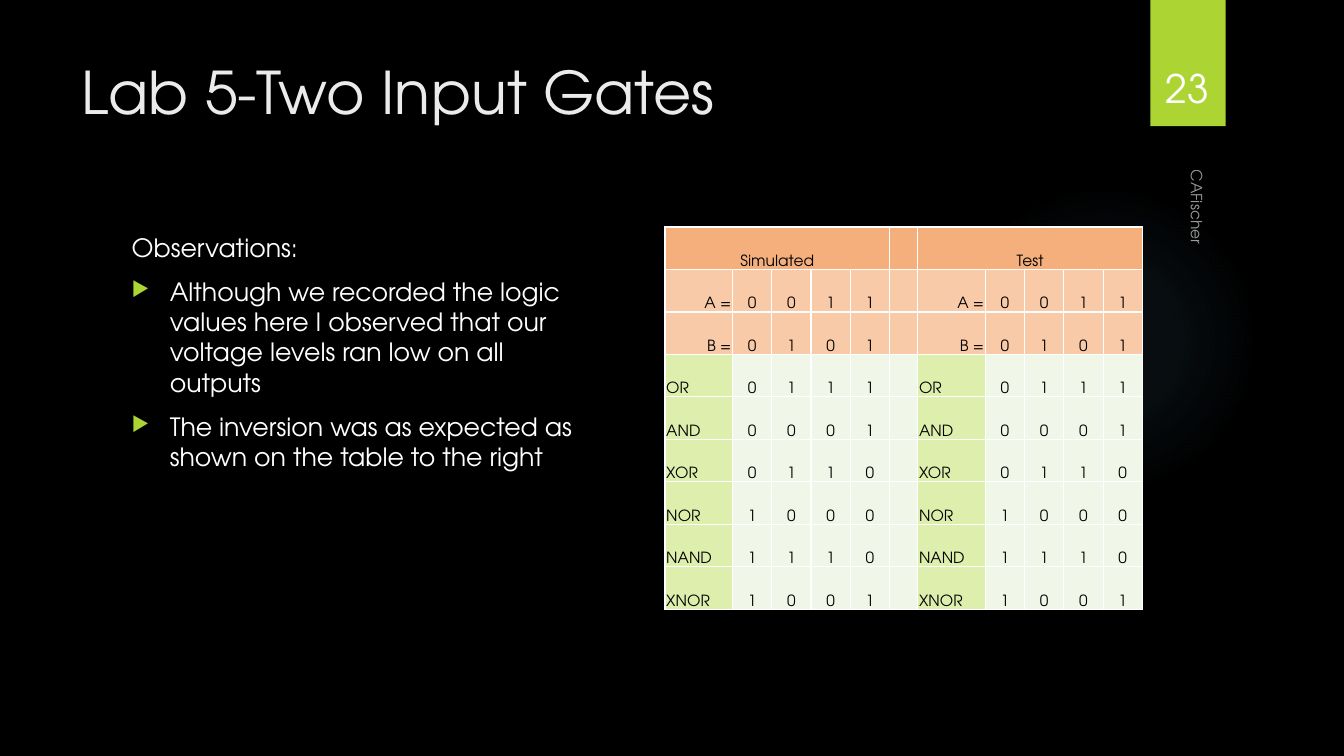
from lxml import etree
from pptx import Presentation
from pptx.dml.color import RGBColor
from pptx.enum.shapes import MSO_SHAPE
from pptx.enum.text import MSO_ANCHOR, PP_ALIGN
from pptx.oxml import parse_xml
from pptx.oxml.ns import nsdecls, qn
from pptx.util import Cm, Pt

FONT = "TeX Gyre Adventor"
BLACK = RGBColor(0x00, 0x00, 0x00)
WHITE = RGBColor(0xFF, 0xFF, 0xFF)
TITLE_GRAY = RGBColor(0xEB, 0xEB, 0xEB)
LIME = RGBColor(0xAC, 0xD4, 0x33)
GLOW_BLUE = RGBColor(0x7A, 0xC4, 0xF0)
ORANGE = RGBColor(0xF5, 0xAF, 0x7C)
LIGHT_ORANGE = RGBColor(0xF9, 0xCA, 0xA7)
GREEN = RGBColor(0xDE, 0xEE, 0xAD)
LIGHT_GREEN = RGBColor(0xF1, 0xF7, 0xE8)
LEFT, CENTER, RIGHT = PP_ALIGN.LEFT, PP_ALIGN.CENTER, PP_ALIGN.RIGHT
TOP, BOTTOM = MSO_ANCHOR.TOP, MSO_ANCHOR.BOTTOM


def format_paragraph(paragraph, size, color, alignment=LEFT):
    paragraph.alignment = alignment
    for run in paragraph.runs:
        run.font.name = FONT
        run.font.size = Pt(size)
        run.font.color.rgb = color


def add_text(slide, left, top, width, height, text, anchor):
    shape = slide.shapes.add_textbox(Cm(left), Cm(top), Cm(width), Cm(height))
    shape.text_frame.word_wrap = True
    shape.text_frame.vertical_anchor = anchor
    shape.text_frame.text = text
    return shape


presentation = Presentation()
presentation.slide_width = Cm(33.87)
presentation.slide_height = Cm(19.05)
slide = presentation.slides.add_slide(presentation.slide_layouts[5])
slide.background.fill.solid()
slide.background.fill.fore_color.rgb = BLACK

# Background glow and page tab
glow = slide.shapes.add_shape(MSO_SHAPE.OVAL, Cm(23.9), Cm(4.65), Cm(7.82), Cm(7.82))
glow.shadow.inherit = False
glow.line.fill.background()
stops = "".join(
    f'<a:gs pos="{position}000"><a:srgbClr val="{GLOW_BLUE}">'
    f'<a:alpha val="{alpha}000"/></a:srgbClr></a:gs>'
    for position, alpha in [(0, 7), (36, 6), (69, 0)]
)
gradient = parse_xml(
    f'<a:gradFill {nsdecls("a")}><a:gsLst>{stops}</a:gsLst><a:path path="circle">'
    '<a:fillToRect l="50000" t="50000" r="50000" b="50000"/></a:path></a:gradFill>'
)
glow.element.spPr.find(qn("a:prstGeom")).addnext(gradient)

page_tab = slide.shapes.add_shape(MSO_SHAPE.RECTANGLE, Cm(28.99), Cm(0), Cm(1.9), Cm(3.18))
page_tab.shadow.inherit = False
page_tab.fill.solid()
page_tab.fill.fore_color.rgb = LIME
page_tab.line.fill.background()

# Title
title = slide.shapes.title
title.left, title.top, title.width, title.height = Cm(1.8), Cm(1.27), Cm(26.14), Cm(3.89)
title.text_frame.text = "Lab 5-Two Input Gates"
title.text_frame.vertical_anchor = TOP
format_paragraph(title.text_frame.paragraphs[0], 42, TITLE_GRAY)

# Observations
observations = [
    "Observations:",
    "Although we recorded the logic values here I observed that our voltage levels ran low on all outputs",
    "The inversion was as expected as shown on the table to the right",
]
body = add_text(slide, 3.07, 5.72, 12.22, 11.66, "\n".join(observations), TOP)
for index, paragraph in enumerate(body.text_frame.paragraphs):
    format_paragraph(paragraph, 18, WHITE)
    if index > 0:
        paragraph.space_before = Pt(10)
        properties = paragraph._p.get_or_add_pPr()
        properties.set("marL", str(Cm(0.96)))
        properties.set("indent", str(-Cm(0.96)))
        bullet_color = etree.SubElement(properties, qn("a:buClr"))
        etree.SubElement(bullet_color, qn("a:srgbClr"), val=str(LIME))
        etree.SubElement(properties, qn("a:buSzPct"), val="80000")
        etree.SubElement(properties, qn("a:buChar"), char="▶")

# Footer and page number
footer = add_text(slide, 24.87, 8.97, 10.72, 0.84, "CAFischer", BOTTOM)
footer.rotation = 90
format_paragraph(footer.text_frame.paragraphs[0], 11, WHITE)
footer_color = next(footer.element.iter(qn("a:srgbClr")))
etree.SubElement(footer_color, qn("a:alpha"), val="60000")

page_number = add_text(slide, 28.75, 0.81, 2.34, 2.13, "23", BOTTOM)
format_paragraph(page_number.text_frame.paragraphs[0], 28, WHITE, CENTER)

# Truth tables, simulated and tested side by side
inputs = [("A =", "0011"), ("B =", "0101")]
gates = [
    ("OR", "0111"),
    ("AND", "0001"),
    ("XOR", "0110"),
    ("NOR", "1000"),
    ("NAND", "1110"),
    ("XNOR", "1001"),
]
blank = [""] * 4
rows = [["Simulated", *blank, "", "Test", *blank]]
for label, values in inputs + gates:
    rows.append([label, *values, "", label, *values])

half_widths = [1.7] + [0.99] * 4
column_widths = half_widths + [0.71] + half_widths
row_height = 1.07
label_columns = (0, 6)
table = slide.shapes.add_table(
    len(rows), len(column_widths), Cm(16.76), Cm(5.72),
    Cm(sum(column_widths)), Cm(row_height * len(rows)),
).table
table.first_row = False
table.horz_banding = False
for column, width in zip(table.columns, column_widths):
    column.width = Cm(width)
for row in table.rows:
    row.height = Cm(row_height)

for row_index, row_texts in enumerate(rows):
    for column_index, text in enumerate(row_texts):
        is_label = column_index in label_columns
        alignment = CENTER
        if row_index == 0:
            color = ORANGE
        elif row_index <= len(inputs):
            color = LIGHT_ORANGE
            alignment = RIGHT if is_label else CENTER
        else:
            color = GREEN if is_label else LIGHT_GREEN
            alignment = LEFT if is_label else CENTER
        cell = table.cell(row_index, column_index)
        cell.margin_left = cell.margin_right = cell.margin_top = Cm(0.03)
        cell.margin_bottom = 0
        cell.vertical_anchor = BOTTOM
        cell.text_frame.text = text
        format_paragraph(cell.text_frame.paragraphs[0], 11, BLACK, alignment)
        cell_properties = cell._tc.get_or_add_tcPr()
        for side in ("lnL", "lnR", "lnT", "lnB"):
            border = etree.SubElement(cell_properties, qn(f"a:{side}"), w=str(Pt(1)))
            border_fill = etree.SubElement(border, qn("a:solidFill"))
            etree.SubElement(border_fill, qn("a:srgbClr"), val=str(WHITE))
        cell.fill.solid()
        cell.fill.fore_color.rgb = color

for first in label_columns:
    table.cell(0, first).merge(table.cell(0, first + 4))

presentation.save("out.pptx")
